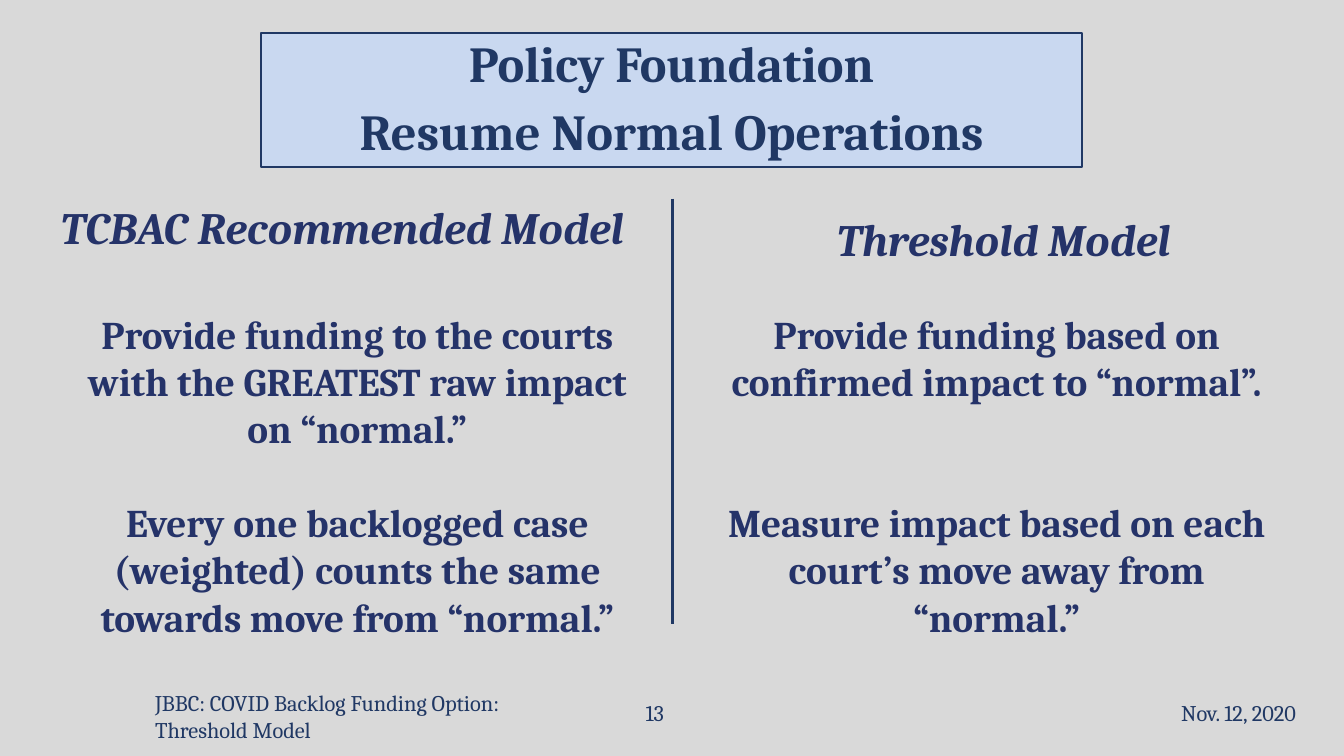
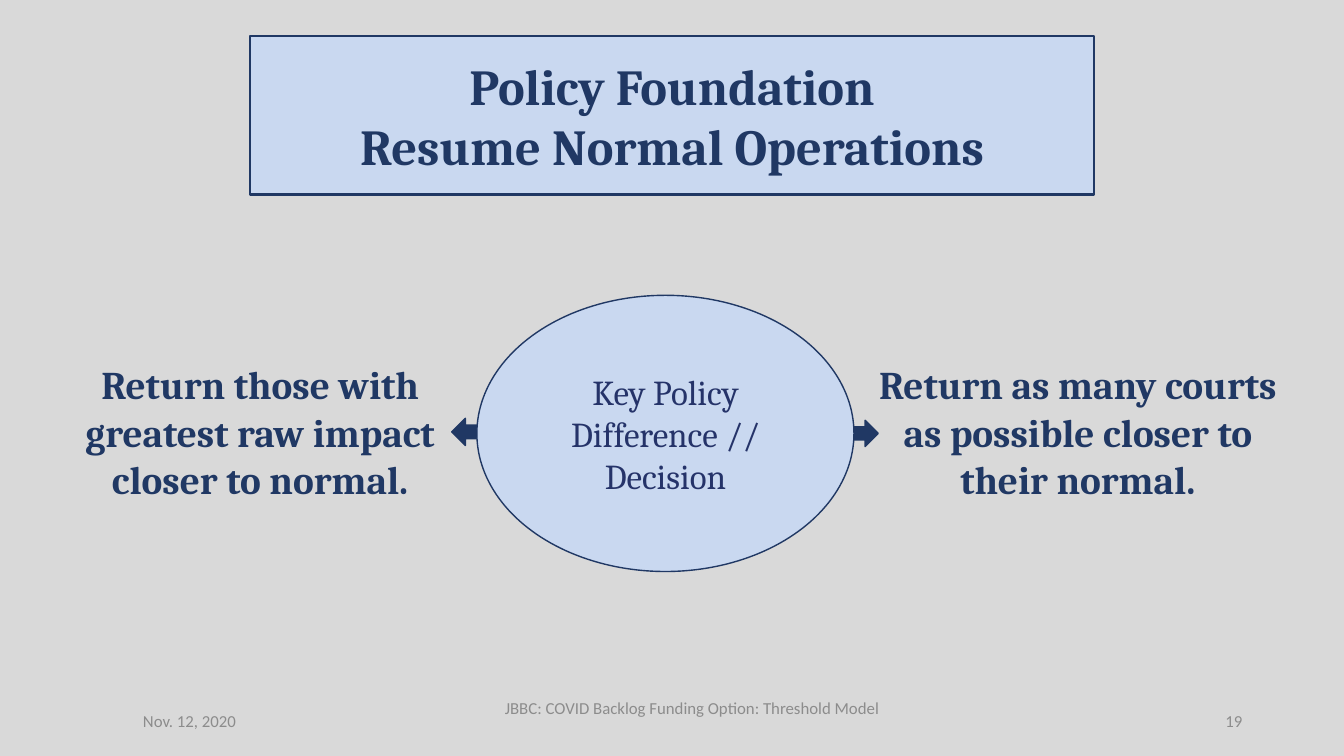
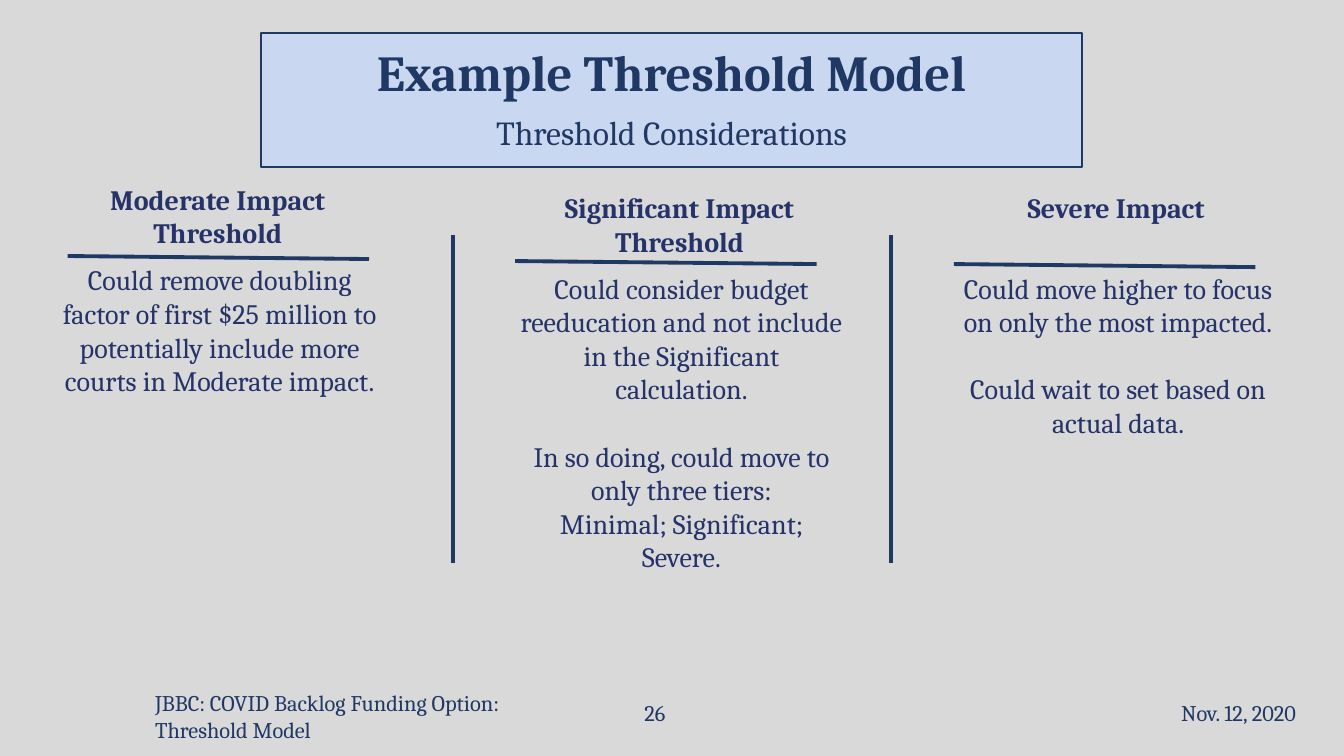
from dataclasses import dataclass, replace

from lxml import etree
from pptx import Presentation
from pptx.dml.color import RGBColor
from pptx.enum.shapes import MSO_CONNECTOR, MSO_SHAPE
from pptx.enum.text import MSO_ANCHOR, MSO_AUTO_SIZE, PP_ALIGN
from pptx.oxml.ns import qn
from pptx.shapes.autoshape import Shape
from pptx.slide import Slide
from pptx.text.text import TextFrame
from pptx.util import Inches, Pt

LEFT, CENTER, RIGHT = PP_ALIGN.LEFT, PP_ALIGN.CENTER, PP_ALIGN.RIGHT
TOP, MIDDLE = MSO_ANCHOR.TOP, MSO_ANCHOR.MIDDLE
ELLIPSE, RIGHT_ARROW = MSO_SHAPE.OVAL, MSO_SHAPE.RIGHT_ARROW
STRAIGHT = MSO_CONNECTOR.STRAIGHT

COLORS = {
    "background": "D9D9D9",
    "panel": "C9D8F0",
    "navy": "203864",
    "indigo": "253369",
    "gray": "8C8C8C",
}
TITLE_ONLY_LAYOUT = 5
LINE_HEIGHT = 1.2
RULE_WIDTH = 2.75
FOOTER = "JBBC: COVID Backlog Funding Option: Threshold Model"
DATE = "Nov. 12, 2020"


@dataclass(frozen=True)
class Box:
    left: float
    top: float
    width: float
    height: float

    def inches(self) -> tuple[int, int, int, int]:
        return (Inches(self.left), Inches(self.top),
                Inches(self.width), Inches(self.height))


@dataclass(frozen=True)
class Style:
    size: float
    color: str = "indigo"
    bold: bool = False
    italic: bool = False
    font: str = "Cambria"


@dataclass(frozen=True)
class Line:
    """A paragraph; gap is the space above it, counted in text lines."""
    text: str
    gap: int = 0


@dataclass(frozen=True)
class ModelColumn:
    heading: str
    heading_box: Box
    body_left: float
    body: tuple[Line, ...]


@dataclass(frozen=True)
class Outcome:
    text: str
    text_left: float
    arrow: Box
    rotation: int


@dataclass(frozen=True)
class ThresholdColumn:
    heading: str
    heading_box: Box
    rule_left: float
    rule_top: float
    body_height: float
    body: tuple[Line, ...]


TITLE = Style(36, "navy", bold=True)
SUBTITLE = Style(24, "navy")
MODEL_HEADING = Style(32, bold=True, italic=True)
MODEL_BODY = Style(28, bold=True)
OUTCOME = Style(28, "navy", bold=True)
DECISION = Style(25)
THRESHOLD_BODY = Style(20)
THRESHOLD_HEADING = replace(THRESHOLD_BODY, bold=True)
FOOTER_LARGE = Style(16, "navy")
FOOTER_SMALL = Style(12, "gray", font="Calibri")

TITLE_BOX = Box(2.59, 0.33, 8.14, 1.33)
TALL_TITLE_BOX = Box(2.48, 0.36, 8.37, 1.57)
POLICY_TITLE = (("Policy Foundation", TITLE), ("Resume Normal Operations", TITLE))
EXAMPLE_TITLE = (("Example Threshold Model", TITLE), ("Threshold Considerations", SUBTITLE))

MODEL_COLUMNS = (
    ModelColumn(
        "TCBAC Recommended Model", Box(-0.33, 1.78, 7.45, 0.68), 0.71,
        (Line("Provide funding to the courts with the GREATEST raw impact on “normal.”"),
         Line("Every one backlogged case (weighted) counts the same towards move "
              "from “normal.”", gap=1))),
    ModelColumn(
        "Threshold Model", Box(6.23, 1.9, 7.45, 0.68), 7.05,
        (Line("Provide funding based on confirmed impact to “normal”."),
         Line("Measure impact based on each court’s move away from “normal.”", gap=2))),
)
OUTCOMES = (
    Outcome("Return those with greatest raw impact closer to normal.", 0.36,
            Box(4.48, 4.15, 0.55, 0.27), 180),
    Outcome("Return as many courts as possible closer to their normal.", 8.47,
            Box(8.24, 4.17, 0.47, 0.26), 0),
)
THRESHOLD_COLUMNS = (
    ThresholdColumn(
        "Moderate Impact Threshold", Box(0.46, 1.76, 3.4, 0.77), 0.67, 2.54, 2.46,
        (Line("Could remove doubling factor of first $25 million to potentially "
              "include more courts in Moderate impact."),)),
    ThresholdColumn(
        "Significant Impact Threshold", Box(5.04, 1.84, 3.4, 0.77), 5.11, 2.59, 3.47,
        (Line("Could consider budget reeducation and not include in the "
              "Significant calculation."),
         Line("In so doing, could move to only three tiers:", gap=1),
         Line("Minimal; Significant; Severe."))),
    ThresholdColumn(
        "Severe Impact", Box(9.37, 1.84, 3.4, 0.44), 9.46, 2.62, 3.13,
        (Line("Could move higher to focus on only the most impacted."),
         Line("Could wait to set based on actual data.", gap=1))),
)


def rgb(name: str) -> RGBColor:
    return RGBColor.from_string(COLORS[name])


def add_run(paragraph, text: str, style: Style) -> None:
    run = paragraph.add_run()
    run.text = text
    font = run.font
    font.name, font.size = style.font, Pt(style.size)
    font.bold, font.italic = style.bold, style.italic
    font.color.rgb = rgb(style.color)


def next_paragraph(frame: TextFrame, index: int):
    return frame.add_paragraph() if index else frame.paragraphs[0]


def write_lines(frame: TextFrame, lines: tuple[Line, ...], style: Style,
                align: PP_ALIGN, anchor: MSO_ANCHOR) -> None:
    frame.word_wrap = True
    frame.vertical_anchor = anchor
    for index, line in enumerate(lines):
        paragraph = next_paragraph(frame, index)
        paragraph.alignment = align
        if line.gap:
            paragraph.space_before = Pt(line.gap * style.size * LINE_HEIGHT)
        add_run(paragraph, line.text, style)


def add_text(slide: Slide, box: Box, lines: tuple[Line, ...], style: Style,
             align: PP_ALIGN = CENTER, anchor: MSO_ANCHOR = TOP,
             inset: float = 0.05) -> None:
    """Add a text box; inset is its top and bottom margin in inches."""
    frame = slide.shapes.add_textbox(*box.inches()).text_frame
    frame.margin_top = frame.margin_bottom = Inches(inset)
    write_lines(frame, lines, style, align, anchor)


def paint(shape: Shape, fill: str, line_width: float) -> None:
    shape.fill.solid()
    shape.fill.fore_color.rgb = rgb(fill)
    shape.line.color.rgb = rgb("navy")
    shape.line.width = Pt(line_width)


def add_preset(slide: Slide, preset: MSO_SHAPE, box: Box, fill: str) -> Shape:
    shape = slide.shapes.add_shape(preset, *box.inches())
    shape.shadow.inherit = False
    paint(shape, fill, 1)
    return shape


def add_rule(slide: Slide, left: float, top: float, right: float, bottom: float) -> None:
    connector = slide.shapes.add_connector(
        STRAIGHT, Inches(left), Inches(top), Inches(right), Inches(bottom))
    connector.line.color.rgb = rgb("navy")
    connector.line.width = Pt(RULE_WIDTH)
    etree.SubElement(connector.element.spPr, qn("a:effectLst"))


def add_titled_slide(presentation, title_lines: tuple[tuple[str, Style], ...],
                     box: Box = TITLE_BOX, line_spacing: float = 0.9,
                     space_before: float = 10) -> Slide:
    slide = presentation.slides.add_slide(presentation.slide_layouts[TITLE_ONLY_LAYOUT])
    title = slide.shapes.title
    title.left, title.top, title.width, title.height = box.inches()
    paint(title, "panel", 1.5)
    frame = title.text_frame
    frame.auto_size = MSO_AUTO_SIZE.NONE
    frame.vertical_anchor = MIDDLE
    for index, (text, style) in enumerate(title_lines):
        paragraph = next_paragraph(frame, index)
        paragraph.alignment = CENTER
        paragraph.line_spacing = line_spacing
        paragraph.space_before = Pt(space_before)
        add_run(paragraph, text, style)
    return slide


def add_large_footer(slide: Slide, number: int) -> None:
    for text, box, align in (
        (DATE, Box(11.42, 6.87, 1.73, 0.4), CENTER),
        (FOOTER, Box(1.44, 6.95, 4.21, 0.31), LEFT),
        (str(number), Box(6.23, 6.87, 0.53, 0.4), CENTER),
    ):
        add_text(slide, box, (Line(text),), FOOTER_LARGE, align, MIDDLE)


def add_small_footer(slide: Slide, number: int) -> None:
    for text, box, align in (
        (DATE, Box(1.32, 6.95, 3, 0.4), LEFT),
        (FOOTER, Box(3.95, 6.7, 5.83, 0.64), CENTER),
        (str(number), Box(9.42, 6.95, 3, 0.4), RIGHT),
    ):
        add_text(slide, box, (Line(text),), FOOTER_SMALL, align, MIDDLE)


def build_model_comparison(presentation) -> None:
    slide = add_titled_slide(presentation, POLICY_TITLE)
    for column in MODEL_COLUMNS:
        add_text(slide, column.heading_box, (Line(column.heading),), MODEL_HEADING, inset=0.2)
        add_text(slide, Box(column.body_left, 2.88, 5.67, 1.59), column.body,
                 MODEL_BODY, inset=0.2)
    add_rule(slide, 6.67, 1.97, 6.67, 6.19)
    add_large_footer(slide, 13)


def build_key_decision(presentation) -> None:
    slide = add_titled_slide(presentation, POLICY_TITLE, TALL_TITLE_BOX, 1.0, 0)
    for outcome in OUTCOMES:
        add_text(slide, Box(outcome.text_left, 3.53, 4.44, 1.51),
                 (Line(outcome.text),), OUTCOME)
        arrow = add_preset(slide, RIGHT_ARROW, outcome.arrow, "navy")
        arrow.rotation = outcome.rotation
    decision = add_preset(slide, ELLIPSE, Box(4.73, 2.93, 3.74, 2.74), "panel")
    write_lines(decision.text_frame, (Line("Key Policy Difference // Decision"),),
                DECISION, CENTER, MIDDLE)
    add_small_footer(slide, 19)


def build_threshold_considerations(presentation) -> None:
    slide = add_titled_slide(presentation, EXAMPLE_TITLE)
    for column in THRESHOLD_COLUMNS:
        heading = column.heading_box
        add_text(slide, heading, (Line(column.heading),), THRESHOLD_HEADING)
        body_box = Box(heading.left + 0.02, heading.top + 0.8,
                       heading.width, column.body_height)
        add_text(slide, body_box, column.body, THRESHOLD_BODY)
        add_rule(slide, column.rule_left, column.rule_top,
                 column.rule_left + 2.99, column.rule_top + 0.03)
    for divider in (4.49, 8.84):
        add_rule(slide, divider, 2.33, divider, 5.59)
    add_large_footer(slide, 26)


def main() -> None:
    presentation = Presentation()
    presentation.slide_width, presentation.slide_height = Inches(13.33), Inches(7.5)
    background = presentation.slide_master.background.fill
    background.solid()
    background.fore_color.rgb = rgb("background")
    build_model_comparison(presentation)
    build_key_decision(presentation)
    build_threshold_considerations(presentation)
    presentation.save("out.pptx")


if __name__ == "__main__":
    main()
